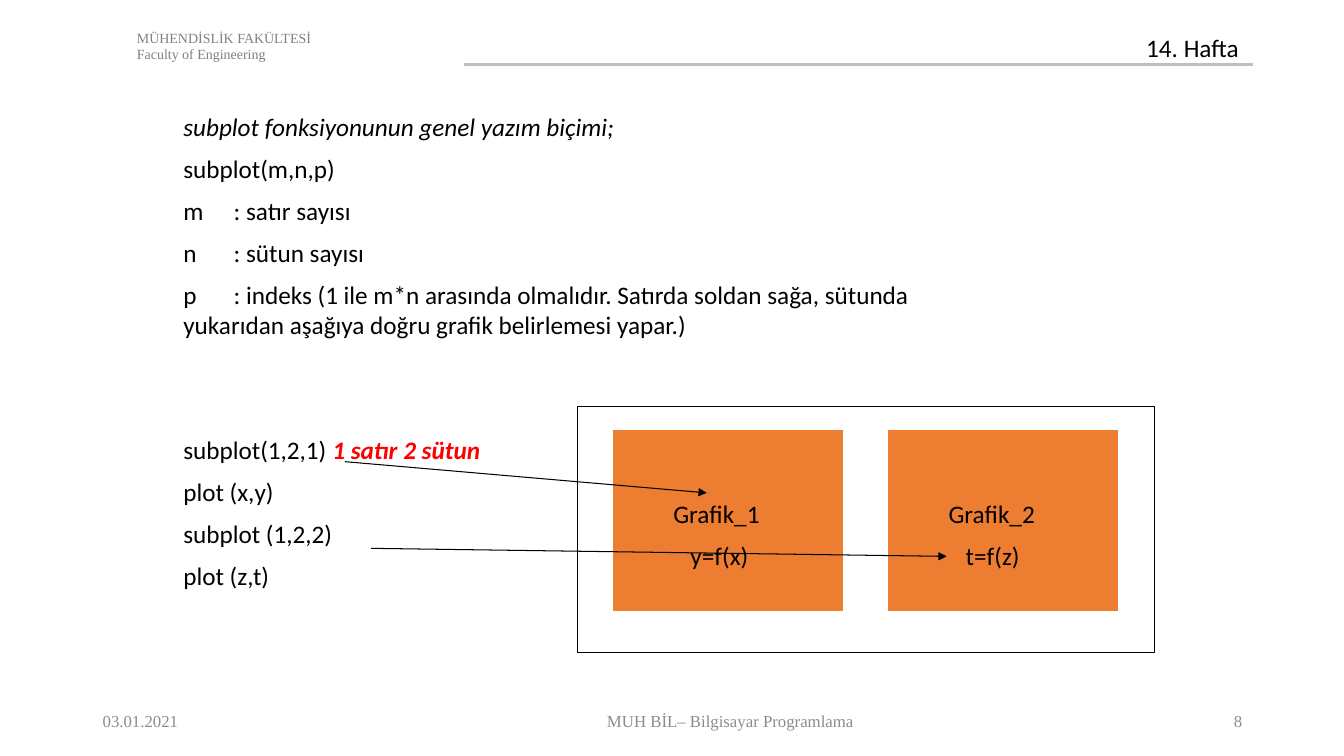
from lxml import etree
from pptx import Presentation
from pptx.dml.color import RGBColor
from pptx.enum.shapes import MSO_CONNECTOR, MSO_SHAPE
from pptx.enum.text import MSO_ANCHOR, PP_ALIGN
from pptx.oxml.ns import qn
from pptx.util import Inches, Pt

BLACK = RGBColor(0x00, 0x00, 0x00)
WHITE = RGBColor(0xFF, 0xFF, 0xFF)
RED = RGBColor(0xFF, 0x00, 0x00)
ORANGE = RGBColor(0xED, 0x7D, 0x31)
HEADER_GRAY = RGBColor(0x80, 0x80, 0x80)
FOOTER_GRAY = RGBColor(0x8C, 0x8C, 0x8C)
RULE_GRAY = RGBColor(0xBF, 0xBF, 0xBF)
SERIF = "Times New Roman"


def add_text(page, box, lines, size=18, font="Calibri", color=BLACK, gap=0,
             align=PP_ALIGN.LEFT, anchor=MSO_ANCHOR.TOP, right_margin=0.1):
    """Each line is a string or a list of (text, format) spans."""
    frame = page.shapes.add_textbox(*map(Inches, box)).text_frame
    frame.word_wrap = True
    frame.vertical_anchor = anchor
    frame.margin_right = Inches(right_margin)
    for index, line in enumerate(lines):
        para = frame.paragraphs[0] if index == 0 else frame.add_paragraph()
        para.alignment = align
        if index:
            para.space_before = Pt(gap)
        for text, style in [(line, {})] if isinstance(line, str) else line:
            span = para.add_run()
            span.text = text
            span.font.name = font
            span.font.size = Pt(size)
            span.font.color.rgb = style.get("color", color)
            span.font.bold = style.get("bold", False)
            span.font.italic = style.get("italic", False)
    return frame


def add_rectangle(page, box, fill=None, line=BLACK, width=0.75):
    shape = page.shapes.add_shape(MSO_SHAPE.RECTANGLE, *map(Inches, box))
    shape.shadow.inherit = False
    if fill is None:
        shape.fill.background()
    else:
        shape.fill.solid()
        shape.fill.fore_color.rgb = fill
    shape.line.color.rgb = line
    shape.line.width = Pt(width)


def add_line(page, start, end, color=BLACK, width=0.75, arrow=False):
    line = page.shapes.add_connector(MSO_CONNECTOR.STRAIGHT, *map(Inches, start + end))
    line.line.color.rgb = color
    line.line.width = Pt(width)
    if arrow:
        outline = line.line._get_or_add_ln()
        etree.SubElement(outline, qn("a:tailEnd"), type="triangle")
    etree.SubElement(line._element.spPr, qn("a:effectLst"))


def add_header(page, left, top):
    add_line(page, (left + 3.34, top + 0.4), (left + 11.17, top + 0.4), RULE_GRAY, 1.5)
    add_text(page, (left, top, 6.67, 0.44),
             ["MÜHENDİSLİK FAKÜLTESİ", "Faculty of Engineering"],
             size=10, font=SERIF, color=HEADER_GRAY)
    add_text(page, (left + 10.01, top + 0.03, 1.15, 0.4), ["14. Hafta"], right_margin=0)


def add_syntax(page, box):
    add_text(page, box, [
        [("subplot fonksiyonunun genel yazım biçimi;", {"italic": True})],
        "subplot(m,n,p)",
        "m\t: satır sayısı",
        "n\t: sütun sayısı",
        "p\t: indeks (1 ile m*n arasında olmalıdır. Satırda soldan sağa, "
        "sütunda yukarıdan aşağıya doğru grafik belirlemesi yapar.)",
    ], gap=8.5, right_margin=1.8)


def add_example(page, box):
    add_text(page, box, [
        [("subplot(1,2,1) ", {}),
         ("1 satır 2 sütun", {"color": RED, "bold": True, "italic": True})],
        "plot (x,y)",
        "subplot (1,2,2)",
        "plot (z,t)",
    ], gap=8.5)


def add_figure_window(page, left, top):
    panels = [("Grafik_1", "y=f(x)"), ("Grafik_2", "t=f(z)")]
    for index, lines in enumerate(panels):
        panel_left = left + 0.34 + index * 2.73
        add_rectangle(page, (panel_left, top + 0.23, 2.3, 1.81), ORANGE, WHITE, 1.5)
        frame = add_text(page, (panel_left + 0.51, top + 0.86, 1.28, 0.85), lines, gap=8.5)
        formula = frame.paragraphs[1]._p.get_or_add_pPr()
        formula.set("marL", str(Inches(0.17)))
    add_rectangle(page, (left, top, 5.72, 2.44))


def add_footer(page, top):
    for left, width, text, align in [
        (0.92, 1.57, "03.01.2021", PP_ALIGN.LEFT),
        (2.73, 9.03, "MUH BİL– Bilgisayar Programlama", PP_ALIGN.CENTER),
        (11.97, 0.45, "8", PP_ALIGN.RIGHT),
    ]:
        add_text(page, (left, top, width, 0.4), [text], size=12, font=SERIF,
                 color=FOOTER_GRAY, align=align, anchor=MSO_ANCHOR.MIDDLE)


def main():
    deck = Presentation()
    deck.slide_width, deck.slide_height = Inches(13.33), Inches(7.5)
    page = deck.slides.add_slide(deck.slide_layouts[6])
    add_header(page, 1.26, 0.24)
    add_syntax(page, (1.72, 1.05, 10.07, 2.51))
    add_example(page, (1.72, 4.26, 3.93, 1.76))
    add_figure_window(page, 5.73, 4.03)
    add_line(page, (3.42, 4.58), (7.01, 4.89), arrow=True)
    add_line(page, (3.68, 5.44), (9.39, 5.52), arrow=True)
    add_footer(page, 6.95)
    deck.save("out.pptx")


if __name__ == "__main__":
    main()
